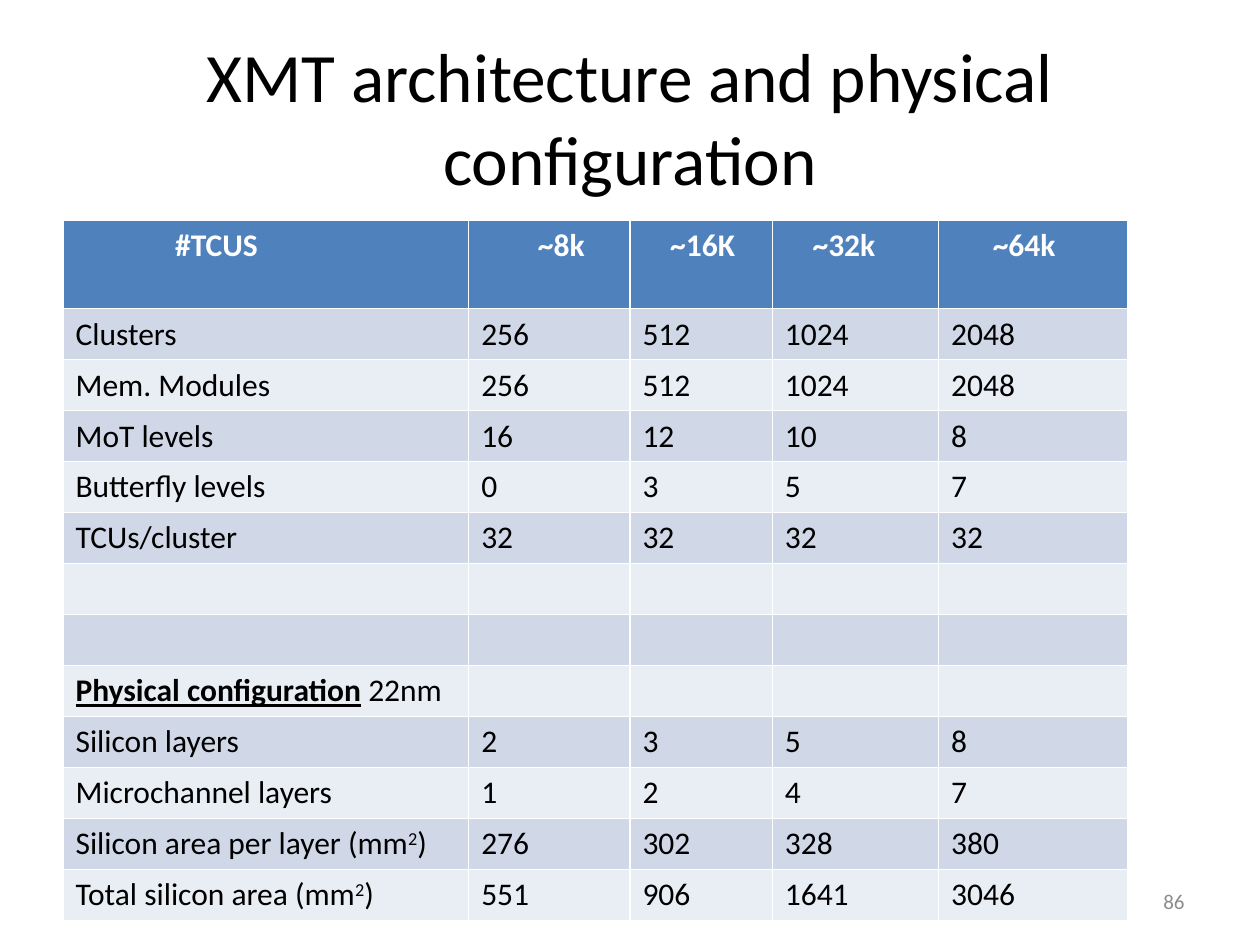
"""Build the slide on the XMT architecture and its physical configuration."""
from dataclasses import dataclass
from typing import NamedTuple

from pptx import Presentation
from pptx.dml.color import RGBColor as Rgb
from pptx.enum.text import MSO_ANCHOR as Anchor, PP_ALIGN as Align
from pptx.util import Inches, Pt

FONT = "Calibri"
COLORS = {"text": "000000", "head": "4F81BD", "light": "FFFFFF",
          "odd": "D0D8E8", "even": "E9EDF4", "number": "8C8C8C"}


class Part(NamedTuple):
    text: str
    strong: bool = False
    power: bool = False


class Head(NamedTuple):
    text: str
    width: float
    indent: float


@dataclass
class Row:
    label: list[Part]
    values: tuple = ("",) * 4


@dataclass
class Label:
    text: str
    box: tuple
    size: float
    color: str
    align: Align


LABELS = [
    Label("XMT architecture and physical configuration",
          (0.5, 0.3, 9, 1.25), 39.6, "text", Align.CENTER),
    Label("86", (7.17, 6.95, 2.33, 0.4), 12, "number", Align.RIGHT),
]
HEADS = [Head("#TCUS", 3.22, 0.79), Head("~8k", 1.28, 0.45),
         Head("~16K", 1.13, 0.22), Head("~32k", 1.32, 0.22),
         Head("~64k", 1.5, 0.33)]
ROWS = [
    Row([Part("Clusters")], (256, 512, 1024, 2048)),
    Row([Part("Mem. Modules")], (256, 512, 1024, 2048)),
    Row([Part("MoT levels")], (16, 12, 10, 8)),
    Row([Part("Butterfly levels")], (0, 3, 5, 7)),
    Row([Part("TCUs/cluster")], (32, 32, 32, 32)),
    Row([]),
    Row([]),
    Row([Part("Physical configuration", strong=True), Part(" 22nm")]),
    Row([Part("Silicon layers")], (2, 3, 5, 8)),
    Row([Part("Microchannel layers")], (1, 2, 4, 7)),
    Row([Part("Silicon area per layer (mm"), Part("2", power=True), Part(")")],
        (276, 302, 328, 380)),
    Row([Part("Total silicon area (mm"), Part("2", power=True), Part(")")],
        (551, 906, 1641, 3046)),
]


def style(font, size: float, color: str, bold: bool = False) -> None:
    """Set the face, size, colour and weight of a font."""
    font.name, font.size, font.bold = FONT, Pt(size), bold
    font.color.rgb = Rgb.from_string(COLORS[color])


def add_label(slide, label: Label) -> None:
    """Add a wrapped, vertically centred line of text."""
    frame = slide.shapes.add_textbox(*map(Inches, label.box)).text_frame
    frame.word_wrap = True
    frame.vertical_anchor = Anchor.MIDDLE
    frame.text = label.text
    para = frame.paragraphs[0]
    para.alignment = label.align
    style(para.runs[0].font, label.size, label.color)


def fill_cell(cell, parts: list[Part], fill: str, color: str) -> None:
    """Colour a cell and write its parts as runs."""
    cell.fill.solid()
    cell.fill.fore_color.rgb = Rgb.from_string(COLORS[fill])
    para = cell.text_frame.paragraphs[0]
    for part in parts:
        run = para.add_run()
        run.text = part.text
        style(run.font, 18, color, part.strong or fill == "head")
        run.font.underline = part.strong
        if part.power:
            run.font._element.set("baseline", "30000")


def add_grid(slide) -> None:
    """Add the table with its header and banded rows."""
    width = sum(head.width for head in HEADS)
    height = 0.7 + 0.41 * len(ROWS)
    table = slide.shapes.add_table(
        len(ROWS) + 1, len(HEADS), Inches(0.5), Inches(1.75),
        Inches(width), Inches(height)).table
    for col, head in enumerate(HEADS):
        table.columns[col].width = Inches(head.width)
        cell = table.cell(0, col)
        cell.margin_left = Inches(0.1 + head.indent)
        fill_cell(cell, [Part(head.text)], "head", "light")
    table.rows[0].height = Inches(0.7)
    for num, row in enumerate(ROWS, 1):
        table.rows[num].height = Inches(0.405)
        cells = [row.label] + [[Part(str(v))] if v != "" else []
                               for v in row.values]
        for col, parts in enumerate(cells):
            fill_cell(table.cell(num, col), parts,
                      "odd" if num % 2 else "even", "text")


def main() -> None:
    """Build and save the slide."""
    deck = Presentation()
    deck.slide_width, deck.slide_height = Inches(10), Inches(7.5)
    slide = deck.slides.add_slide(deck.slide_layouts[6])
    title, number = LABELS
    add_label(slide, title)
    add_grid(slide)
    add_label(slide, number)
    deck.save("out.pptx")


if __name__ == "__main__":
    main()
